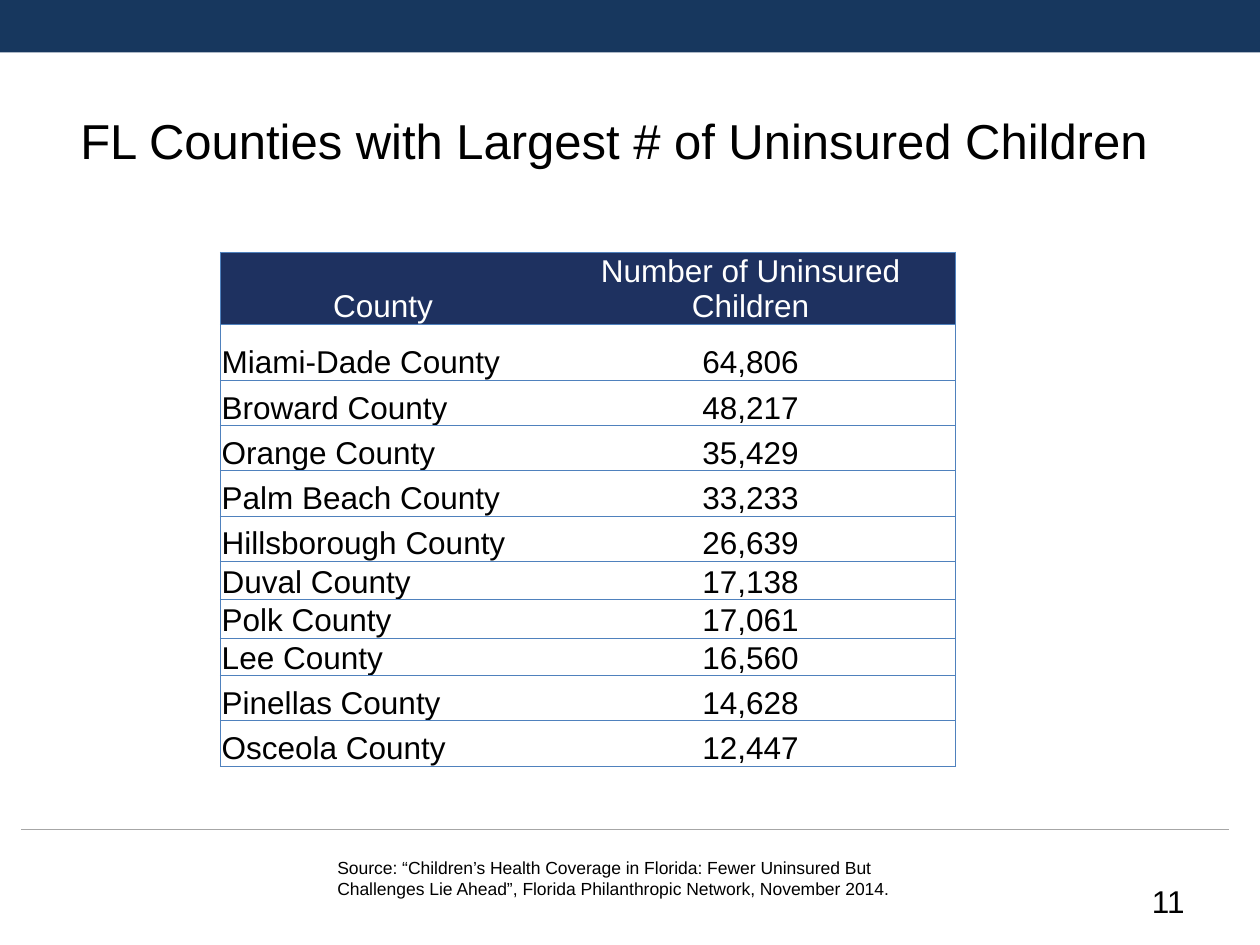
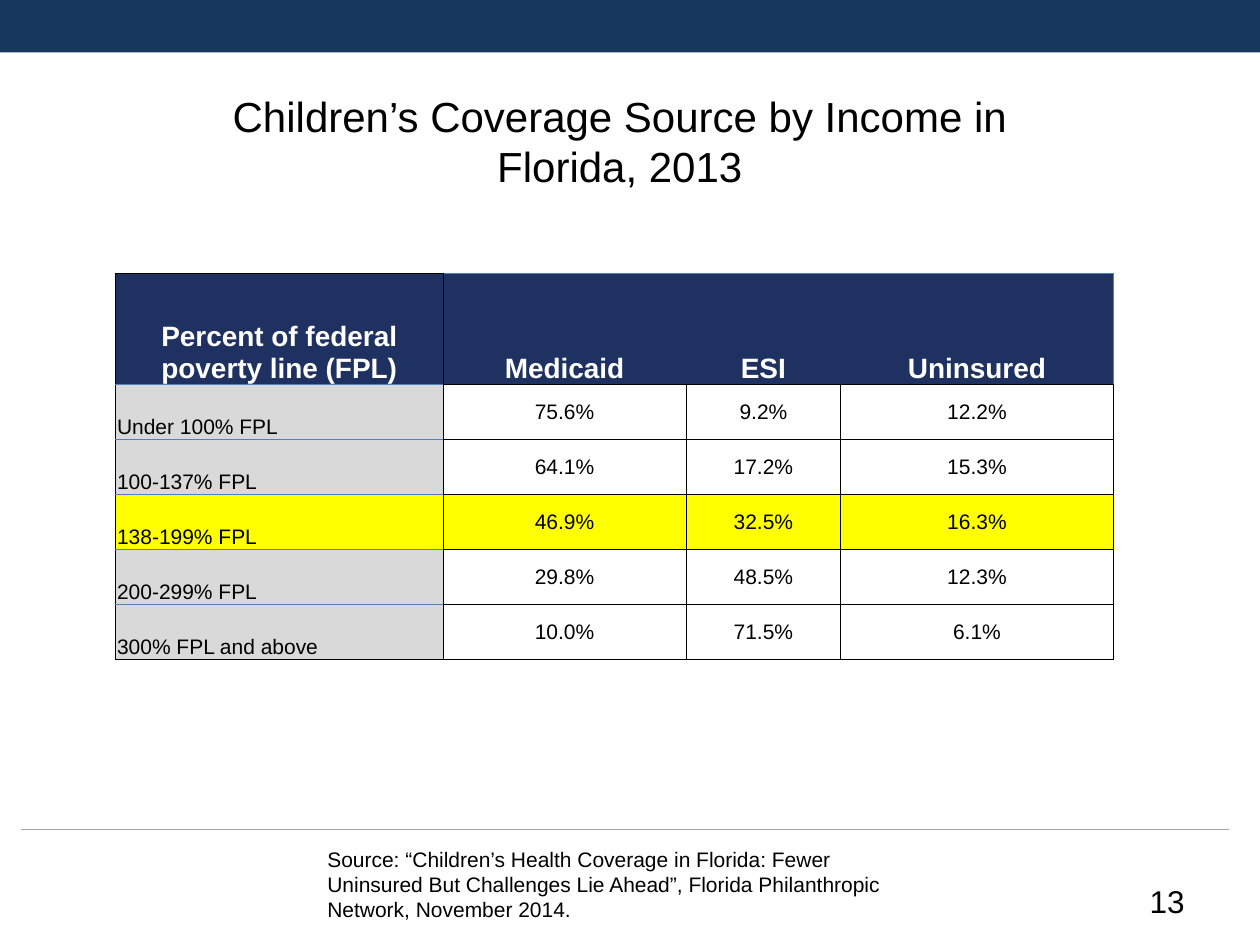
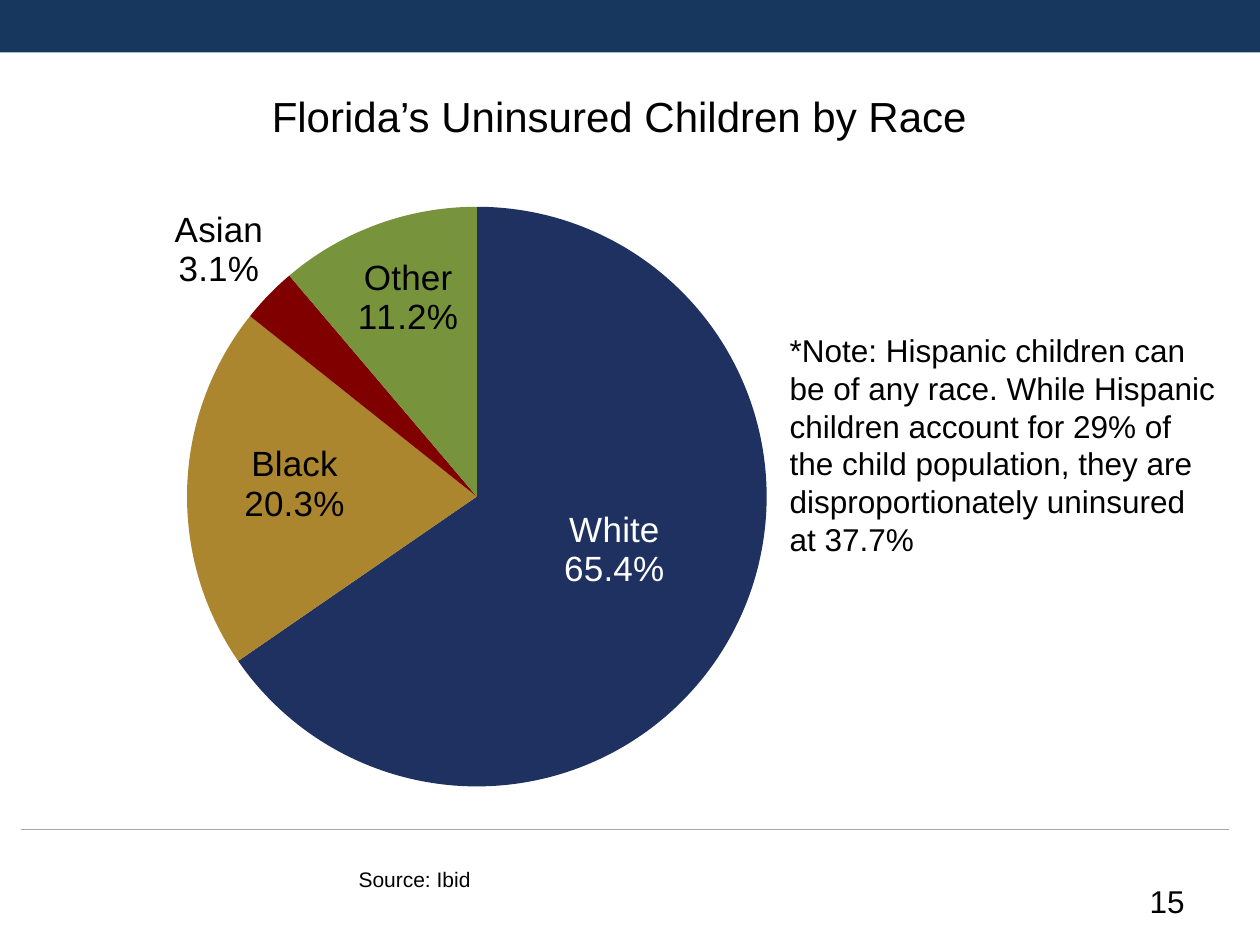
from copy import deepcopy
from dataclasses import dataclass

from lxml.etree import SubElement
from pptx import Presentation
from pptx.chart.data import CategoryChartData
from pptx.dml.color import RGBColor
from pptx.enum.chart import XL_CHART_TYPE, XL_LABEL_POSITION
from pptx.enum.shapes import MSO_CONNECTOR, MSO_SHAPE
from pptx.enum.text import MSO_ANCHOR, MSO_AUTO_SIZE, PP_ALIGN
from pptx.oxml import parse_xml
from pptx.oxml.ns import nsdecls, qn
from pptx.util import Cm, Pt


@dataclass(frozen=True)
class Theme:
    font: str = "Arial"
    band: str = "17375E"
    navy: str = "1E3160"
    rule: str = "A6A6A6"
    border: str = "4F81BD"
    text: str = "000000"
    light: str = "FFFFFF"
    label_fill: str = "D9D9D9"
    highlight: str = "FFFF00"
    wide_title: int = 28
    title: int = 24
    chart_label: int = 20
    body: int = 18
    column_head: int = 16
    small: int = 12
    source: int = 10


THEME = Theme()

# Boxes are left, top, width, height in centimetres.
SLIDE_SIZE = (25.4, 19.05)
BAND_HEIGHT = 1.06
RULE_LEFT, RULE_RIGHT, RULE_TOP = 0.43, 24.77, 16.72
PAGE_BOX = (18.21, 17.65, 5.92, 1.02)

FULL_SOURCE = (
    "Source: “Children’s Health Coverage in Florida: Fewer Uninsured But "
    "Challenges Lie Ahead”, Florida Philanthropic Network, November 2014."
)

COUNTY_HEADINGS = ("County", "Number of Uninsured Children")
COUNTIES = [
    ("Miami-Dade County", "64,806"),
    ("Broward County", "48,217"),
    ("Orange County", "35,429"),
    ("Palm Beach County", "33,233"),
    ("Hillsborough County", "26,639"),
    ("Duval County", "17,138"),
    ("Polk County", "17,061"),
    ("Lee County", "16,560"),
    ("Pinellas County", "14,628"),
    ("Osceola County", "12,447"),
]
COUNTY_ORIGIN = (4.44, 5.08)
COUNTY_WIDTHS = (6.56, 8.26)
COUNTY_HEIGHTS = [1.45, 1.14] + [0.91] * 4 + [0.78] * 2 + [0.75] + [0.91] * 2

INCOME_HEADINGS = ("Percent of federal poverty line (FPL)", "Medicaid", "ESI", "Uninsured")
INCOMES = [
    ("Under 100% FPL", "75.6%", "9.2%", "12.2%"),
    ("100-137% FPL", "64.1%", "17.2%", "15.3%"),
    ("138-199% FPL", "46.9%", "32.5%", "16.3%"),
    ("200-299% FPL", "29.8%", "48.5%", "12.3%"),
    ("300% FPL and above", "10.0%", "71.5%", "6.1%"),
]
HIGHLIGHTED_INCOME = "138-199% FPL"
INCOME_ORIGIN = (2.33, 5.51)
INCOME_WIDTHS = (6.6, 4.9, 3.12, 5.49)
INCOME_HEIGHTS = [2.23] + [1.11] * len(INCOMES)

# Name, share, slice colour, label colour, label place, label shift (parts of the chart)
RACES = [
    ("White", 65.4, THEME.navy, THEME.light, XL_LABEL_POSITION.CENTER, (0.01, -0.02)),
    ("Black", 20.3, "AC862E", THEME.text, XL_LABEL_POSITION.CENTER, (-0.04, -0.01)),
    ("Asian", 3.1, "800000", THEME.text, XL_LABEL_POSITION.OUTSIDE_END, None),
    ("Other", 11.2, "77933C", THEME.text, XL_LABEL_POSITION.CENTER, (-0.02, -0.09)),
]
RACE_BOX = (0, 2.33, 18.85, 13.97)
PIE_AREA = {"x": 0.2, "y": 0.13, "w": 0.62, "h": 0.84}
HISPANIC_NOTE = (
    "*Note: Hispanic children can be of any race. While Hispanic children account for "
    "29% of the child population, they are disproportionately uninsured at 37.7%"
)


def rgb(color):
    return RGBColor.from_string(color)


def style_font(font, size, color=THEME.text, bold=False):
    for attribute, value in {"name": THEME.font, "size": Pt(size), "bold": bold}.items():
        setattr(font, attribute, value)
    font.color.rgb = rgb(color)


def add_text(slide, text, box, size, align=PP_ALIGN.LEFT, grow=True):
    frame = slide.shapes.add_textbox(*map(Cm, box)).text_frame
    frame.word_wrap = True
    frame.auto_size = MSO_AUTO_SIZE.SHAPE_TO_FIT_TEXT if grow else MSO_AUTO_SIZE.NONE
    paragraph = frame.paragraphs[0]
    paragraph.alignment = align
    run = paragraph.add_run()
    run.text = text
    style_font(run.font, size)


def add_base_slide(prs, page):
    """Add a slide with the band, the rule above the footer and the page number."""
    slide = prs.slides.add_slide(prs.slide_layouts[6])
    band = slide.shapes.add_shape(MSO_SHAPE.RECTANGLE, 0, 0, Cm(SLIDE_SIZE[0]), Cm(BAND_HEIGHT))
    band.shadow.inherit = False
    band.fill.solid()
    band.fill.fore_color.rgb = rgb(THEME.band)
    band.line.fill.background()
    rule = slide.shapes.add_connector(
        MSO_CONNECTOR.STRAIGHT, Cm(RULE_LEFT), Cm(RULE_TOP), Cm(RULE_RIGHT), Cm(RULE_TOP))
    rule.line.color.rgb = rgb(THEME.rule)
    rule.line.width = Pt(0.75)
    SubElement(rule._element.spPr, qn("a:effectLst"))
    add_text(slide, str(page), PAGE_BOX, THEME.body, PP_ALIGN.RIGHT, grow=False)
    return slide


def set_borders(cell, borders):
    """Draw the sides named in borders (L, R, T, B) and clear the others."""
    properties = cell._tc.get_or_add_tcPr()
    for position, side in enumerate("LRTB"):
        color = borders.get(side)
        paint = (f'<a:solidFill><a:srgbClr val="{color}"/></a:solidFill>'
                 if color else "<a:noFill/>")
        properties.insert(position, parse_xml(
            f'<a:ln{side} {nsdecls("a")} w="{Pt(0.5)}">{paint}</a:ln{side}>'))


def add_grid(slide, rows, origin, widths, heights, cell_format):
    """Add a table; cell_format(row, column) gives the look of each cell."""
    box = (*origin, sum(widths), sum(heights))
    table = slide.shapes.add_table(len(rows), len(widths), *map(Cm, box)).table
    table.first_row = table.horz_banding = False
    for column, width in zip(table.columns, widths):
        column.width = Cm(width)
    for r, (values, height) in enumerate(zip(rows, heights)):
        table.rows[r].height = Cm(height)
        for c, value in enumerate(values):
            look = cell_format(r, c)
            cell = table.cell(r, c)
            layout = {
                "text": value,
                "vertical_anchor": look["anchor"],
                "margin_left": Cm(0.03),
                "margin_right": Cm(0.03),
                "margin_top": Cm(0.03),
                "margin_bottom": 0,
            }
            for attribute, setting in layout.items():
                setattr(cell, attribute, setting)
            if look["fill"]:
                cell.fill.solid()
                cell.fill.fore_color.rgb = rgb(look["fill"])
            else:
                cell.fill.background()
            set_borders(cell, look["borders"])
            paragraph = cell.text_frame.paragraphs[0]
            paragraph.alignment = look["align"]
            style_font(paragraph.runs[0].font, *look["font"])


def county_format(row, column):
    head = row == 0
    return {
        "anchor": MSO_ANCHOR.BOTTOM,
        "align": PP_ALIGN.CENTER if head or column else PP_ALIGN.LEFT,
        "fill": THEME.navy if head else None,
        "font": (THEME.body, THEME.light if head else THEME.text),
        "borders": dict.fromkeys("RTB" if column else "LTB", THEME.border),
    }


def income_format(row, column):
    head, label = row == 0, column == 0
    last_row, last_column = row == len(INCOMES), column == len(INCOME_HEADINGS) - 1
    borders = dict.fromkeys("LRTB", THEME.text)
    if label:
        if not head:
            borders["T"] = THEME.border
        if not last_row:
            borders["B"] = THEME.border
    elif head:
        borders["T"] = THEME.border
        borders["L"] = THEME.text if column == 1 else None
        borders["R"] = THEME.border if last_column else None
    if head:
        fill = THEME.navy
    elif INCOMES[row - 1][0] == HIGHLIGHTED_INCOME:
        fill = THEME.highlight
    else:
        fill = THEME.label_fill if label else None
    return {
        "anchor": MSO_ANCHOR.BOTTOM if head or label else MSO_ANCHOR.MIDDLE,
        "align": PP_ALIGN.LEFT if label and not head else PP_ALIGN.CENTER,
        "fill": fill,
        "font": (THEME.column_head, THEME.light, True) if head else (THEME.small,),
        "borders": borders,
    }


def manual_layout(places, inner=False):
    """Build a chart layout element from fractions of the chart area."""
    target = '<c:layoutTarget val="inner"/>' if inner else ""
    modes = '<c:xMode val="edge"/><c:yMode val="edge"/>' if inner else ""
    values = "".join(f'<c:{key} val="{value}"/>' for key, value in places.items())
    return parse_xml(f'<c:layout {nsdecls("c")}><c:manualLayout>{target}{modes}{values}'
                     "</c:manualLayout></c:layout>")


def show_name_and_percent(labels):
    for tag, shown in {"showVal": 0, "showCatName": 1, "showPercent": 1}.items():
        labels.find(qn(f"c:{tag}")).set("val", str(shown))
    separator = parse_xml(f'<c:separator {nsdecls("c")}>\n</c:separator>')
    labels.find(qn("c:showBubbleSize")).addnext(separator)


def add_race_pie(slide):
    data = CategoryChartData()
    data.categories = [race[0] for race in RACES]
    data.add_series("Series 1", [race[1] for race in RACES])
    chart = slide.shapes.add_chart(XL_CHART_TYPE.PIE, *map(Cm, RACE_BOX), data).chart
    chart.has_legend = chart.has_title = False
    style_font(chart.font, THEME.chart_label)
    plot_area = chart._chartSpace.chart.plotArea
    for automatic in plot_area.findall(qn("c:layout")):
        plot_area.remove(automatic)
    plot_area.insert(0, manual_layout(PIE_AREA, inner=True))

    chart.plots[0].vary_by_categories = True
    shares = chart.plots[0].series[0]
    labels = shares.data_labels
    labels.number_format = "0.0%"
    labels.number_format_is_linked = False
    style_font(labels.font, THEME.chart_label)
    for index, (_, _, slice_color, label_color, place, _) in enumerate(RACES):
        point = shares.points[index]
        point.format.fill.solid()
        point.format.fill.fore_color.rgb = rgb(slice_color)
        point.format.line.fill.background()
        style_font(point.data_label.font, THEME.chart_label, label_color)
        point.data_label.position = place

    all_labels = labels._element
    show_name_and_percent(all_labels)
    leader_lines = all_labels.find(qn("c:showLeaderLines"))
    if leader_lines is not None:
        leader_lines.set("val", "0")
    number_format = all_labels.find(qn("c:numFmt"))
    for label, race in zip(all_labels.findall(qn("c:dLbl")), RACES):
        show_name_and_percent(label)
        index = label.find(qn("c:idx"))
        index.addnext(deepcopy(number_format))
        if race[-1]:
            index.addnext(manual_layout(dict(zip("xy", race[-1]))))


def add_county_slide(prs):
    slide = add_base_slide(prs, 11)
    add_grid(slide, [COUNTY_HEADINGS, *COUNTIES], COUNTY_ORIGIN,
             COUNTY_WIDTHS, COUNTY_HEIGHTS, county_format)
    add_text(slide, "FL Counties with Largest # of Uninsured Children",
             (1.37, 2.11, 22.66, 1.45), THEME.wide_title)
    add_text(slide, FULL_SOURCE, (6.55, 17.15, 12.7, 1.12), THEME.source)


def add_income_slide(prs):
    slide = add_base_slide(prs, 13)
    add_grid(slide, [INCOME_HEADINGS, *INCOMES], INCOME_ORIGIN,
             INCOME_WIDTHS, INCOME_HEIGHTS, income_format)
    add_text(slide, "Children’s Coverage Source by Income in Florida, 2013",
             (2.97, 1.7, 19.05, 2.31), THEME.title, PP_ALIGN.CENTER)
    add_text(slide, FULL_SOURCE, (6.35, 16.94, 12.7, 1.8), THEME.small)


def add_race_slide(prs):
    slide = add_base_slide(prs, 15)
    add_race_pie(slide)
    add_text(slide, HISPANIC_NOTE, (15.67, 6.55, 9.09, 4.88), THEME.body)
    add_text(slide, "Florida’s Uninsured Children by Race",
             (5.23, 1.7, 14.94, 1.27), THEME.title)
    add_text(slide, "Source: Ibid", (6.98, 17.35, 14.4, 0.76), THEME.small)


def main():
    prs = Presentation()
    prs.slide_width, prs.slide_height = map(Cm, SLIDE_SIZE)
    for add_slide in (add_county_slide, add_income_slide, add_race_slide):
        add_slide(prs)
    prs.save("out.pptx")


if __name__ == "__main__":
    main()
